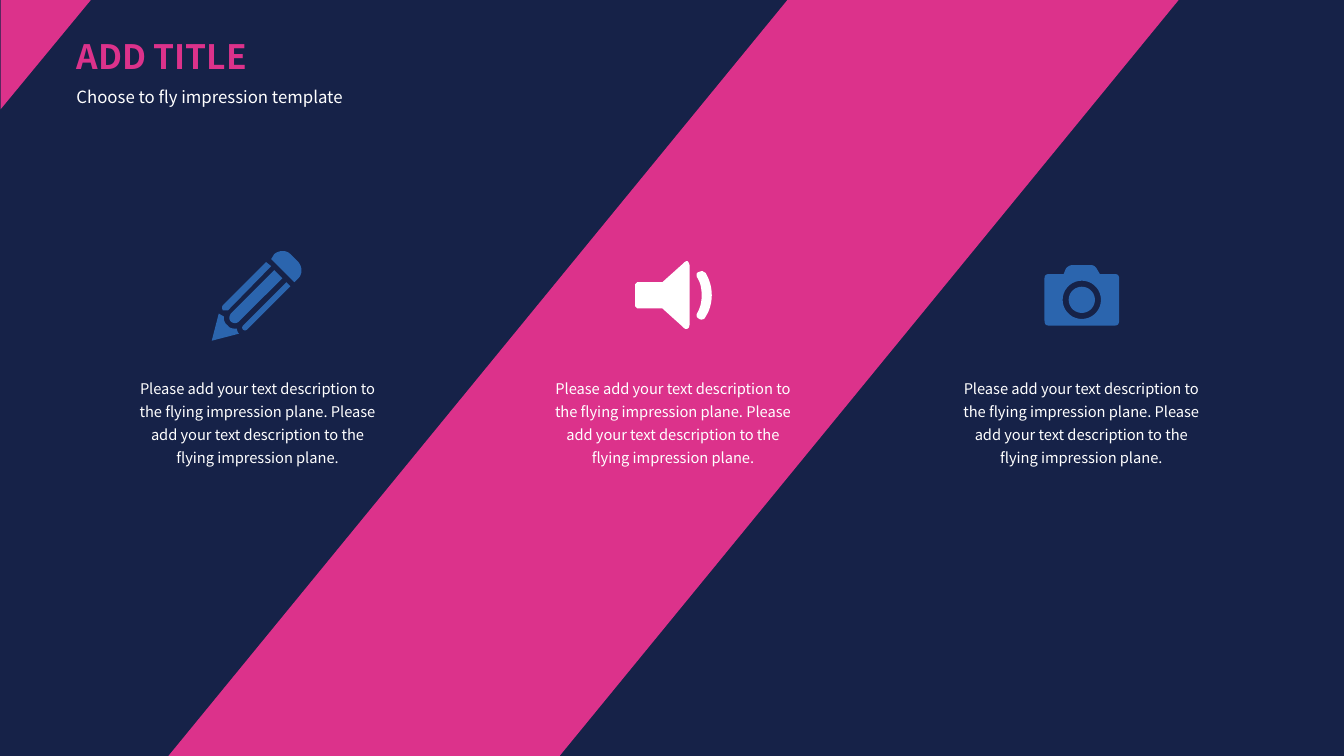
"""Build a title slide with a diagonal band and three icon columns."""
import math
from pptx import Presentation
from pptx.dml.color import RGBColor
from pptx.enum.shapes import MSO_SHAPE
from pptx.enum.text import MSO_ANCHOR, MSO_AUTO_SIZE, PP_ALIGN
from pptx.util import Inches, Pt

TRIANGLE = MSO_SHAPE.ISOSCELES_TRIANGLE
LEFT, CENTER = PP_ALIGN.LEFT, PP_ALIGN.CENTER
TOP = MSO_ANCHOR.TOP
FIT_SHAPE = MSO_AUTO_SIZE.SHAPE_TO_FIT_TEXT
FONT = "Noto Sans CJK SC"
COLORS = {"navy": "162248", "pink": "DC328B", "blue": "2B65AE", "white": "FFFFFF"}
DESCRIPTION = " ".join(["Please add your text description to the flying impression plane."] * 2)
CURVE_STEPS = 8


def add_outline(slide, contours, color):
    """Draw closed contours; a six-number entry is a cubic curve."""
    builder = None
    for contour in contours:
        points = [contour[0]]
        for segment in contour[1:]:
            if len(segment) == 2:
                points.append(segment)
                continue
            x0, y0 = points[-1]
            x1, y1, x2, y2, x3, y3 = segment
            for step in range(1, CURVE_STEPS + 1):
                t = step / CURVE_STEPS
                a, b, c, d = (1 - t) ** 3, 3 * t * (1 - t) ** 2, 3 * t * t * (1 - t), t ** 3
                points.append((a * x0 + b * x1 + c * x2 + d * x3,
                               a * y0 + b * y1 + c * y2 + d * y3))
        points = [(Inches(x), Inches(y)) for x, y in points]
        if builder is None:
            builder = slide.shapes.build_freeform(*points[0])
        else:
            builder.move_to(*points[0])
        builder.add_line_segments(points[1:], close=True)
    shape = builder.convert_to_shape()
    shape.shadow.inherit = False
    shape.fill.solid()
    shape.fill.fore_color.rgb = RGBColor.from_string(COLORS[color])
    shape.line.fill.background()


def set_text(shape, box, text, size, color, align=LEFT, bold=False, spacing=1.3, wrap=True):
    """Place a text shape and format its single paragraph."""
    shape.left, shape.top, shape.width, shape.height = [Inches(value) for value in box]
    frame = shape.text_frame
    frame.text = text
    frame.word_wrap = wrap
    frame.auto_size = FIT_SHAPE
    frame.vertical_anchor = TOP
    paragraph = frame.paragraphs[0]
    paragraph.alignment = align
    paragraph.line_spacing = spacing
    font = paragraph.runs[0].font
    font.name, font.size, font.bold = FONT, Pt(size), bold
    font.color.rgb = RGBColor.from_string(COLORS[color])


presentation = Presentation()
presentation.slide_width, presentation.slide_height = Inches(13.33), Inches(7.5)
slide = presentation.slides.add_slide(presentation.slide_layouts[5])
slide.background.fill.solid()
slide.background.fill.fore_color.rgb = RGBColor.from_string(COLORS["navy"])

add_outline(slide, [[(7.81, 0), (11.69, 0), (5.55, 7.5), (1.67, 7.5)]], "pink")

set_text(slide.shapes.title, (0.66, 0.31, 1.98, 0.5), "ADD TITLE", 24, "pink",
         bold=True, spacing=1.0, wrap=False)
subtitle = slide.shapes.add_textbox(0, 0, 0, 0)
set_text(subtitle, (0.66, 0.75, 3.5, 0.36), "Choose to fly impression template", 12, "white")

corner = slide.shapes.add_shape(TRIANGLE, Inches(-0.09), Inches(0.09), Inches(1.09), Inches(0.9))
corner.adjustments[0] = 0
corner.rotation = 90
corner.shadow.inherit = False
corner.fill.solid()
corner.fill.fore_color.rgb = RGBColor.from_string(COLORS["pink"])
corner.line.fill.background()

pencil = [
    [(2.96, 2.76), (2.92, 2.8), (2.69, 2.57), (2.72, 2.52),
     (2.77, 2.48, 2.84, 2.48, 2.88, 2.52), (2.96, 2.6), (3, 2.65, 3, 2.72, 2.96, 2.76)],
    [(2.41, 3.23), (2.4, 3.24, 2.4, 3.26, 2.41, 3.27), (2.42, 3.28, 2.44, 3.28, 2.45, 3.27),
     (2.88, 2.84), (2.84, 2.8)],
    [(2.21, 3.03), (2.2, 3.04, 2.2, 3.06, 2.21, 3.08), (2.22, 3.08, 2.24, 3.08, 2.26, 3.08),
     (2.69, 2.64), (2.64, 2.6)],
    [(2.72, 2.68), (2.29, 3.11), (2.27, 3.14, 2.27, 3.17, 2.29, 3.19),
     (2.31, 3.21, 2.35, 3.21, 2.37, 3.19), (2.8, 2.76)],
    [(2.37, 3.31), (2.36, 3.3, 2.35, 3.28, 2.35, 3.26), (2.33, 3.26),
     (2.3, 3.26, 2.27, 3.25, 2.26, 3.23), (2.23, 3.21, 2.22, 3.18, 2.22, 3.15),
     (2.22, 3.14), (2.17, 3.11), (2.1, 3.38)],
]
speaker = [
    [(6.77, 2.62), (6.79, 2.6, 6.8, 2.59, 6.82, 2.59), (6.83, 2.6, 6.84, 2.62, 6.84, 2.64),
     (6.84, 3.21), (6.84, 3.24, 6.83, 3.26, 6.82, 3.26), (6.8, 3.27, 6.79, 3.26, 6.77, 3.24),
     (6.57, 3.06), (6.32, 3.06), (6.3, 3.04), (6.3, 2.82), (6.32, 2.8), (6.57, 2.8)],
    [(6.93, 2.7), (6.95, 2.69, 6.96, 2.69, 6.97, 2.69), (6.98, 2.7, 6.99, 2.7, 7, 2.71),
     (7.04, 2.78, 7.06, 2.85, 7.06, 2.93), (7.06, 3, 7.04, 3.08, 7, 3.14),
     (6.99, 3.16, 6.98, 3.17, 6.96, 3.17), (6.95, 3.17, 6.94, 3.17, 6.93, 3.16),
     (6.92, 3.15, 6.91, 3.15, 6.91, 3.13), (6.91, 3.12, 6.91, 3.11, 6.92, 3.1),
     (6.95, 3.04, 6.96, 2.99, 6.96, 2.93), (6.96, 2.87, 6.95, 2.81, 6.92, 2.76),
     (6.91, 2.75, 6.91, 2.74, 6.91, 2.72), (6.91, 2.71, 6.92, 2.7, 6.93, 2.7)],
]
camera_body = [
    (11.06, 2.72), (11.09, 2.72, 11.1, 2.74, 11.1, 2.76), (11.1, 3.18),
    (11.1, 3.21, 11.09, 3.23, 11.06, 3.23), (10.4, 3.23),
    (10.37, 3.23, 10.36, 3.21, 10.36, 3.18), (10.36, 2.76),
    (10.36, 2.74, 10.37, 2.72, 10.4, 2.72), (10.55, 2.72), (10.57, 2.67),
    (10.58, 2.65, 10.61, 2.63, 10.64, 2.63), (10.82, 2.63),
    (10.85, 2.63, 10.87, 2.65, 10.88, 2.67), (10.91, 2.72),
]
angles = [math.radians(degrees) for degrees in range(0, 360, 10)]
lens_rings = [[(10.73 + radius * math.cos(angle), 2.975 + radius * math.sin(angle))
               for angle in angles] for radius in (0.19, 0.13)]

columns = [
    (1.2, pencil, "blue"),
    (5.32, speaker, "white"),
    (9.37, [camera_body] + lens_rings, "blue"),
]
for left, icon, color in columns:
    add_outline(slide, icon, color)
    caption = slide.shapes.add_textbox(0, 0, 0, 0)
    set_text(caption, (left, 3.67, 2.71, 1.01), DESCRIPTION, 10.5, "white", align=CENTER)

presentation.save("out.pptx")
